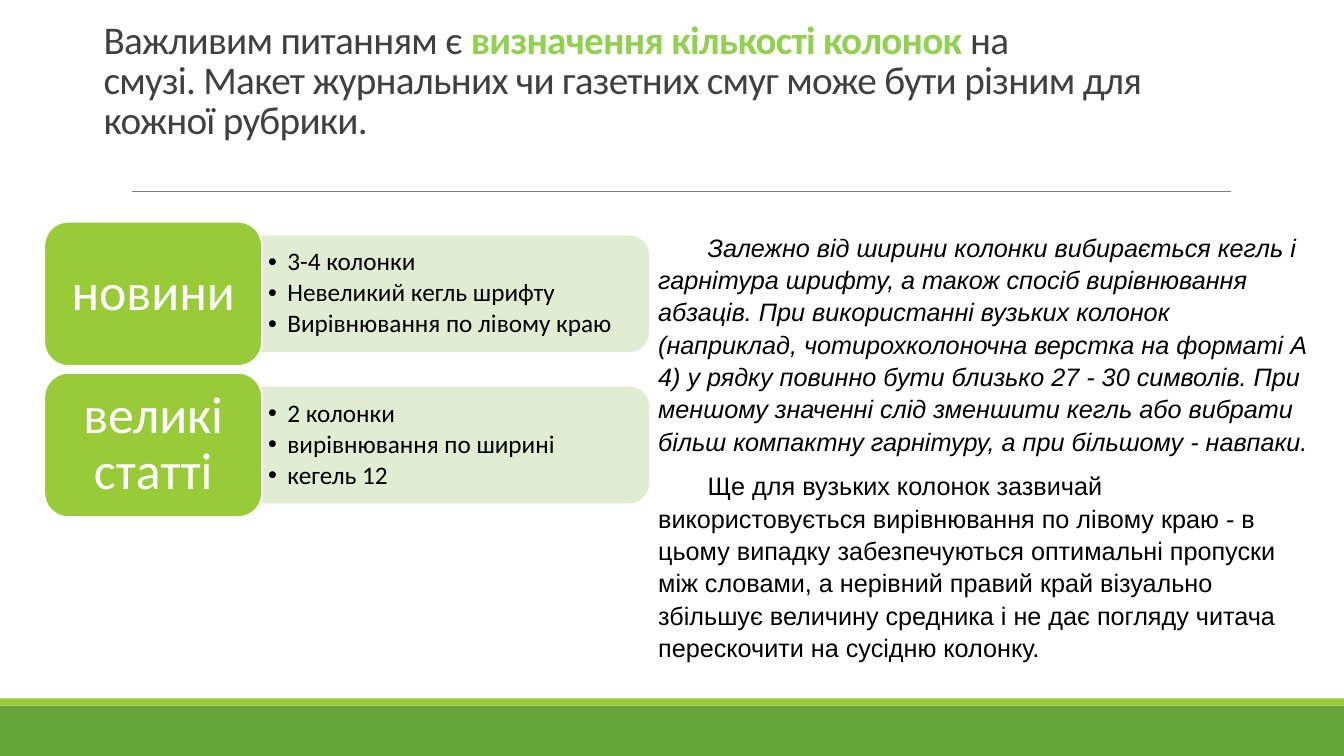
import pptx
import pptx.util
from lxml import etree
from pptx.dml.color import RGBColor
from pptx.enum.shapes import MSO_CONNECTOR, MSO_SHAPE
from pptx.enum.text import MSO_ANCHOR, PP_ALIGN
from pptx.oxml.ns import qn
from pptx.util import Inches, Pt

HEADING = [
    ("Важливим питанням є ", False),
    ("визначення кількості колонок ", True),
    ("на смузі.\u00a0Макет журнальних чи газетних смуг може бути різним для кожної рубрики.", False),
]
RUBRICS = [
    ("новини", ["3-4 колонки", "Невеликий кегль шрифту", "Вирівнювання по лівому краю"]),
    ("великі статті", ["2 колонки", "вирівнювання по ширині", "кегель 12"]),
]
# top, height, italic, text
ADVICE = [
    (2.23, 2.37, True,
     "Залежно від ширини колонки вибирається кегль і гарнітура шрифту, а також спосіб "
     "вирівнювання абзаців. При використанні вузьких колонок (наприклад, чотирохколоночна "
     "верстка на форматі А 4) у рядку повинно бути близько 27 - 30 символів. При меншому "
     "значенні слід зменшити кегль або вибрати більш компактну гарнітуру, а при більшому - "
     "навпаки."),
    (4.6, 2.05, False,
     "Ще для вузьких колонок зазвичай використовується вирівнювання по лівому краю - в цьому "
     "випадку забезпечуються оптимальні пропуски між словами, а нерівний правий край візуально "
     "збільшує величину средника і не дає погляду читача перескочити на сусідню колонку."),
]

GREEN = RGBColor(0x63, 0xA5, 0x37)
LIME = RGBColor(0x99, 0xCB, 0x38)
ACCENT = RGBColor(0x92, 0xD0, 0x50)
PALE = RGBColor(0xDE, 0xEC, 0xCE)
GRAY = RGBColor(0x80, 0x80, 0x80)
DARK = RGBColor(0x40, 0x40, 0x40)
WHITE = RGBColor(0xFF, 0xFF, 0xFF)
BLACK = RGBColor(0, 0, 0)

SLIDE_W, SLIDE_H = 13.33, 7.5
LABEL_X, LABEL_Y, LABEL_W, LABEL_H = 0.44, 2.2, 2.16, 1.43
LABEL_INSET = 0.07
ROW_STEP = 1.5
DETAIL_X, DETAIL_W, DETAIL_H = 2.59, 3.84, 1.14
DETAIL_TEXT_W, DETAIL_TEXT_H = 3.78, 1.03


def add_block(slide, kind, box, fill, line=None, opacity=None):
    block = slide.shapes.add_shape(kind, *map(Inches, box))
    block.shadow.inherit = False
    block.fill.solid()
    block.fill.fore_color.rgb = fill
    if line is None:
        block.line.fill.background()
    else:
        block.line.color.rgb = line
        block.line.width = Pt(1.25)
    if opacity is not None:
        for color in block._element.spPr.iter(qn("a:srgbClr")):
            etree.SubElement(color, qn("a:alpha"), val=str(opacity * 1000))
    return block


def add_text(slide, box, paragraphs, font, paragraph, anchor=MSO_ANCHOR.TOP, insets=(0.1, 0.05)):
    """Add a text box; each paragraph is a list of (text, font changes)."""
    frame = slide.shapes.add_textbox(*map(Inches, box)).text_frame
    frame.word_wrap = True
    frame.vertical_anchor = anchor
    frame.margin_left = frame.margin_right = Inches(insets[0])
    frame.margin_top = frame.margin_bottom = Inches(insets[1])
    for index, pieces in enumerate(paragraphs):
        para = frame.paragraphs[0] if index == 0 else frame.add_paragraph()
        for key, value in paragraph.items():
            setattr(para, key, value)
        for text, changes in pieces:
            run = para.add_run()
            run.text = text
            values = {**font, **changes}
            run.font.color.rgb = values.pop("rgb")
            for key, value in values.items():
                setattr(run.font, key, value)
    return frame


def set_indent(frame, left, first, bullet=None):
    for para in frame.paragraphs:
        props = para._p.get_or_add_pPr()
        props.set("marL", str(Inches(left)))
        props.set("indent", str(Inches(first)))
        if bullet:
            etree.SubElement(props, qn("a:buFont"), typeface="Arial")
            etree.SubElement(props, qn("a:buChar"), char=bullet)


def add_heading(slide):
    font = {"name": "Calibri", "size": Pt(28), "rgb": DARK}
    pieces = [(text, {"bold": True, "rgb": ACCENT} if strong else {}) for text, strong in HEADING]
    frame = add_text(slide, (0.93, 0.41, 11, 1.05), [pieces], font,
                     {"line_spacing": 0.85}, MSO_ANCHOR.BOTTOM)
    for run in frame.paragraphs[0].runs:
        run._r.get_or_add_rPr().set("spc", "-50")


def add_rubric(slide, row, label, details):
    top = LABEL_Y + row * ROW_STEP
    middle = top + LABEL_H / 2
    center = DETAIL_X + DETAIL_W / 2
    panel = add_block(slide, MSO_SHAPE.ROUND_2_SAME_RECTANGLE,
                      (center - DETAIL_H / 2, middle - DETAIL_W / 2, DETAIL_H, DETAIL_W),
                      PALE, PALE, opacity=90)
    panel.rotation = 90
    frame = add_text(slide, (DETAIL_X, middle - DETAIL_TEXT_H / 2, DETAIL_TEXT_W, DETAIL_TEXT_H),
                     [[(detail, {})] for detail in details],
                     {"name": "Calibri", "size": Pt(18), "rgb": BLACK},
                     {"line_spacing": 0.9, "space_after": Pt(2.7)},
                     MSO_ANCHOR.MIDDLE, (0.07, 0.04))
    set_indent(frame, 0.19, -0.19, "•")
    add_block(slide, MSO_SHAPE.ROUNDED_RECTANGLE, (LABEL_X, top, LABEL_W, LABEL_H), LIME, WHITE)
    add_text(slide, (LABEL_X + LABEL_INSET, top + LABEL_INSET,
                     LABEL_W - 2 * LABEL_INSET, LABEL_H - 2 * LABEL_INSET),
             [[(label, {})]], {"name": "Calibri", "size": Pt(37), "rgb": WHITE},
             {"line_spacing": 0.9, "space_after": Pt(12.95), "alignment": PP_ALIGN.CENTER},
             MSO_ANCHOR.MIDDLE, (0.15, 0.08))


def main():
    deck = pptx.Presentation()
    deck.slide_width, deck.slide_height = Inches(SLIDE_W), Inches(SLIDE_H)
    slide = deck.slides.add_slide(deck.slide_layouts[6])

    add_block(slide, MSO_SHAPE.RECTANGLE, (0, 7, SLIDE_W, 0.5), GREEN)
    add_block(slide, MSO_SHAPE.RECTANGLE, (0, 6.93, SLIDE_W, 0.07), LIME)
    rule = slide.shapes.add_connector(MSO_CONNECTOR.STRAIGHT, Inches(1.31), Inches(1.9),
                                      Inches(12.21), Inches(1.9))
    rule.line.color.rgb = GRAY
    rule.line.width = Pt(0.5)
    etree.SubElement(rule._element.spPr, qn("a:effectLst"))

    add_heading(slide)
    for row, (label, details) in enumerate(RUBRICS):
        add_rubric(slide, row, label, details)
    for top, height, italic, text in ADVICE:
        frame = add_text(slide, (6.43, top, 6.67, height), [[(text, {})]],
                         {"name": "Arial", "size": Pt(18), "italic": italic, "rgb": BLACK},
                         {"line_spacing": 1.07})
        set_indent(frame, 0, 0.49)
    deck.save("out.pptx")


if __name__ == "__main__":
    main()
